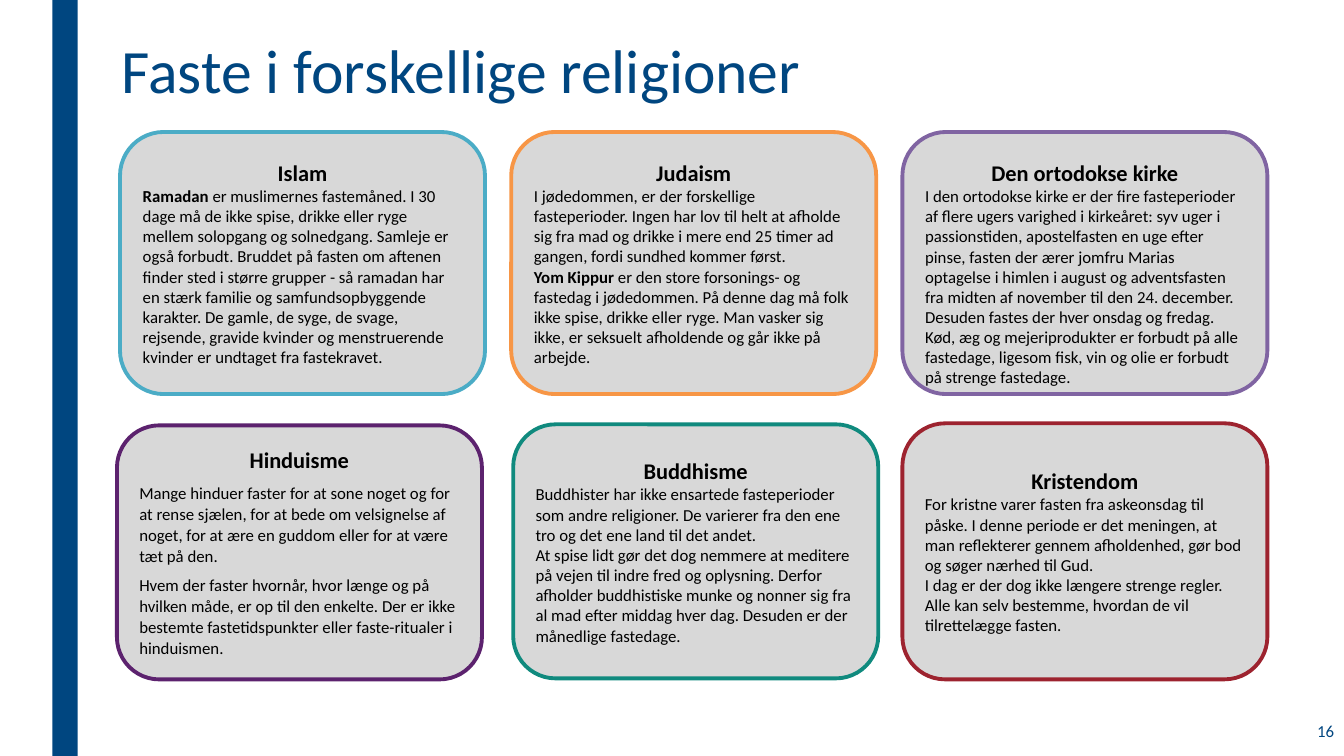
from pptx import Presentation
from pptx.dml.color import RGBColor
from pptx.enum import shapes, text
from pptx.util import Inches, Pt

FONT = "Calibri"
COLORS = {
    "navy": "004680", "gray": "D8D8D8", "black": "000000",
    "cyan": "4BACC6", "orange": "F79646", "lilac": "8064A2",
    "purple": "5C226E", "teal": "108A7E", "red": "9D232F",
}
CARD_WIDTH = 3.62

# Each body paragraph is a list of (text, bold) runs.
CARDS = [
    {"at": (1.19, 1.31), "height": 2.6, "color": "cyan", "heading": "Islam", "body": [
        [("Ramadan", True),
         (" er muslimernes fastemåned. I 30 dage må de ikke spise, drikke eller ryge mellem "
          "solopgang og solnedgang. Samleje er også forbudt. Bruddet på fasten om aftenen finder "
          "sted i større grupper - så ramadan har en stærk familie og samfundsopbyggende karakter. "
          "De gamle, de syge, de svage, rejsende, gravide kvinder og menstruerende kvinder er "
          "undtaget fra fastekravet.", False)]]},
    {"at": (5.07, 1.31), "height": 2.6, "color": "orange", "heading": "Judaism", "body": [
        [("I jødedommen, er der forskellige fasteperioder. Ingen har lov til helt at afholde sig "
          "fra mad og drikke i mere end 25 timer ad gangen, fordi sundhed kommer først.", False)],
        [("Yom Kippur ", True),
         ("er den store forsonings- og fastedag i jødedommen. På denne dag må folk ikke spise, "
          "drikke eller ryge. Man vasker sig ikke, er seksuelt afholdende og går ikke på "
          "arbejde.", False)]]},
    {"at": (8.95, 1.31), "height": 2.6, "color": "lilac", "heading": "Den ortodokse kirke",
     "top_margin": 0.25, "body": [
        [("I den ortodokse kirke er der fire fasteperioder af flere ugers varighed i kirkeåret: "
          "syv uger i passionstiden, apostelfasten en uge efter pinse, fasten der ærer jomfru "
          "Marias optagelse i himlen i august og adventsfasten fra midten af november til den 24. "
          "december. Desuden fastes der hver onsdag og fredag. Kød, æg og mejeriprodukter er "
          "forbudt på alle fastedage, ligesom fisk, vin og olie er forbudt på strenge "
          "fastedage.", False)]]},
    {"at": (1.16, 4.22), "height": 2.52, "color": "purple", "heading": "Hinduisme",
     "line_spacing": Pt(15), "space_before": Pt(6), "body": [
        [("Mange hinduer faster for at sone noget og for at rense sjælen, for at bede om "
          "velsignelse af noget, for at ære en guddom eller for at være tæt på den.", False)],
        [("Hvem der faster hvornår, hvor længe og på hvilken måde, er op til den enkelte. Der er "
          "ikke bestemte fastetidspunkter eller faste-ritualer i hinduismen.", False)]]},
    {"at": (5.09, 4.21), "height": 2.52, "color": "teal", "heading": "Buddhisme", "body": [
        [("Buddhister har ikke ensartede fasteperioder som andre religioner. De varierer fra den "
          "ene tro og det ene land til det andet.", False)],
        [("At spise lidt gør det dog nemmere at meditere på vejen til indre fred og oplysning. "
          "Derfor afholder buddhistiske munke og nonner sig fra al mad efter middag hver dag. "
          "Desuden er der månedlige fastedage.", False)]]},
    {"at": (8.95, 4.2), "height": 2.54, "color": "red", "heading": "Kristendom", "body": [
        [("For kristne varer fasten fra askeonsdag til påske. I denne periode er det meningen, at "
          "man reflekterer gennem afholdenhed, gør bod og søger nærhed til Gud.", False)],
        [("I dag er der dog ikke længere strenge regler. Alle kan selv bestemme, hvordan de vil "
          "tilrettelægge fasten.", False)]]},
]


def rgb(color):
    return RGBColor.from_string(COLORS[color])


def add_run(paragraph, content, size, color, bold=False):
    run = paragraph.add_run()
    run.text = content
    run.font.name = FONT
    run.font.size = Pt(size)
    run.font.bold = bold
    run.font.color.rgb = rgb(color)


def add_filled_shape(slide, kind, left, top, width, height, color):
    shape = slide.shapes.add_shape(
        kind, Inches(left), Inches(top), Inches(width), Inches(height))
    shape.shadow.inherit = False
    shape.fill.solid()
    shape.fill.fore_color.rgb = rgb(color)
    shape.line.fill.background()
    return shape


def add_label(slide, content, left, top, width, height, size, anchor, align, line_spacing=1.0):
    """Add a one-paragraph navy text box."""
    box = slide.shapes.add_textbox(Inches(left), Inches(top), Inches(width), Inches(height))
    frame = box.text_frame
    frame.word_wrap = True
    frame.vertical_anchor = anchor
    paragraph = frame.paragraphs[0]
    paragraph.alignment = align
    paragraph.line_spacing = line_spacing
    add_run(paragraph, content, size, "navy")


def add_card(slide, card):
    """Add a rounded box with a centred heading and left-aligned body text."""
    shape = add_filled_shape(slide, shapes.MSO_SHAPE.ROUNDED_RECTANGLE, *card["at"],
                             CARD_WIDTH, card["height"], "gray")
    shape.line.color.rgb = rgb(card["color"])
    shape.line.width = Pt(2.75)

    frame = shape.text_frame
    frame.word_wrap = True
    frame.vertical_anchor = text.MSO_ANCHOR.MIDDLE
    frame.margin_top = Inches(card.get("top_margin", 0.05))
    heading = frame.paragraphs[0]
    heading.alignment = text.PP_ALIGN.CENTER
    add_run(heading, card["heading"], 16, "black", bold=True)

    for runs in card["body"]:
        paragraph = frame.add_paragraph()
        paragraph.alignment = text.PP_ALIGN.LEFT
        paragraph.line_spacing = card.get("line_spacing")
        paragraph.space_before = card.get("space_before")
        for content, bold in runs:
            add_run(paragraph, content, 12, "black", bold)


def main():
    presentation = Presentation()
    presentation.slide_width = Inches(13.33)
    presentation.slide_height = Inches(7.5)
    slide = presentation.slides.add_slide(presentation.slide_layouts[6])

    add_filled_shape(slide, shapes.MSO_SHAPE.RECTANGLE, 0.52, 0, 0.25, 7.5, "navy")
    add_label(slide, "Faste i forskellige religioner", 1.11, 0.36, 10.5, 1.62, 44,
              text.MSO_ANCHOR.TOP, text.PP_ALIGN.LEFT, line_spacing=0.89)
    add_label(slide, "16", 11.58, 7.03, 1.75, 0.44, 12,
              text.MSO_ANCHOR.MIDDLE, text.PP_ALIGN.RIGHT)
    for card in CARDS:
        add_card(slide, card)

    presentation.save("out.pptx")


if __name__ == "__main__":
    main()
